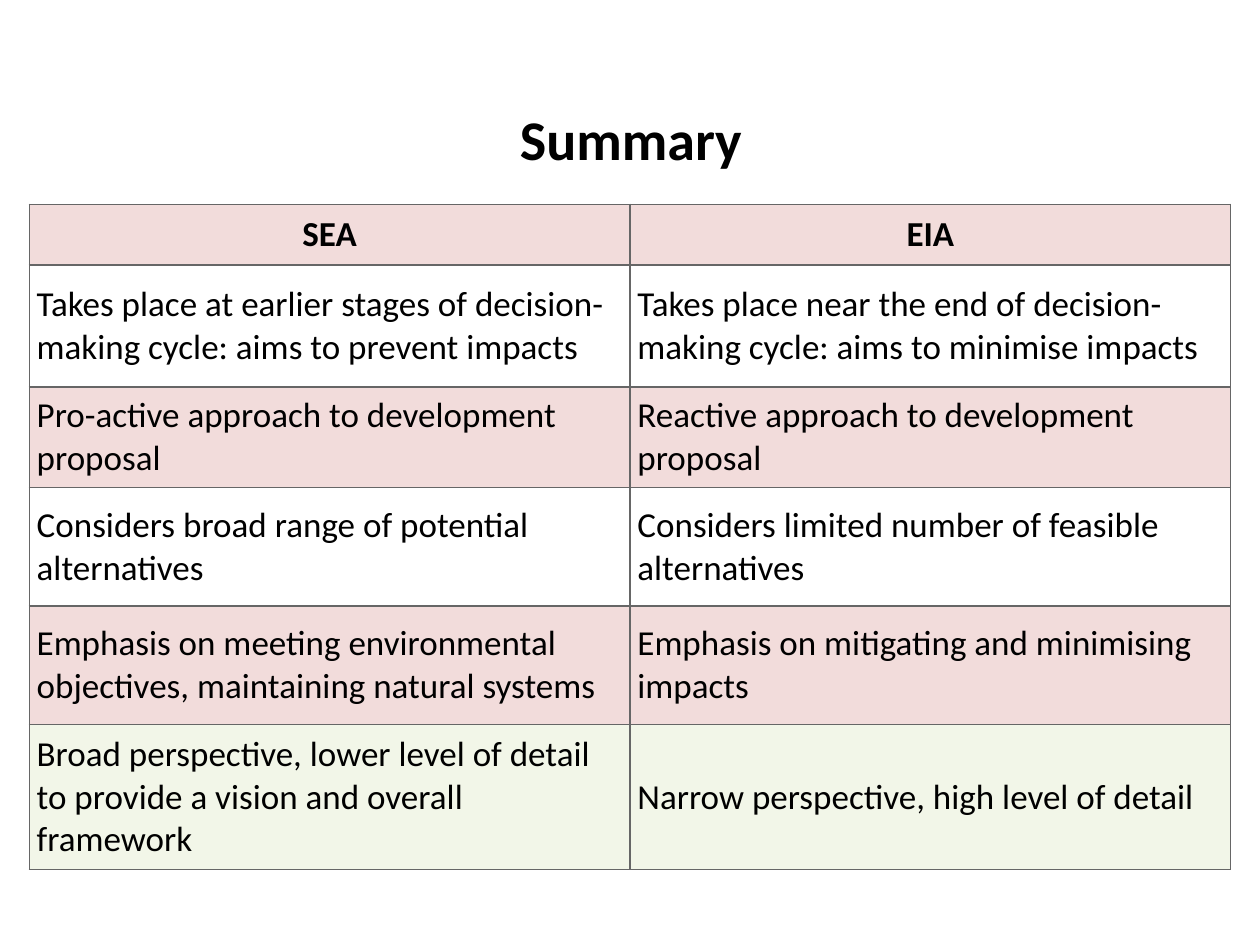
from lxml import etree
from pptx import Presentation
from pptx import util as u
from pptx.dml.color import RGBColor
from pptx.enum import text
from pptx.oxml import ns

ROWS = [
    (1.22, "F2DCDB", "SEA", "EIA"),
    (2.46, None,
     "Takes place at earlier stages of decision-making cycle: aims to prevent impacts",
     "Takes place near the end of decision-making cycle: aims to minimise impacts"),
    (2.01, "F2DCDB",
     "Pro-active approach to development proposal",
     "Reactive approach to development proposal"),
    (2.39, None,
     "Considers broad range of potential alternatives",
     "Considers limited number of feasible alternatives"),
    (2.39, "F2DCDB",
     "Emphasis on meeting environmental objectives, maintaining natural systems",
     "Emphasis on mitigating and minimising impacts"),
    (2.92, "F2F6E8",
     "Broad perspective, lower level of detail to provide a vision and overall framework",
     "Narrow perspective, high level of detail"),
]


def color(value):
    return RGBColor.from_string(value)


class SlideBuilder:
    font = "Calibri"
    ink = "000000"
    border = "666666"
    inset = u.Cm(0.15)

    def __init__(self, slide):
        self.slide = slide

    def add_text(self, paragraph, words, size, bold=False, align=text.PP_ALIGN.LEFT):
        paragraph.alignment = align
        run = paragraph.add_run()
        run.text = words
        run.font.name = self.font
        run.font.size = u.Pt(size)
        run.font.bold = bold
        run.font.color.rgb = color(self.ink)

    def title(self, words, left, top, width, height):
        shape = self.slide.shapes.title
        shape.left, shape.top = u.Cm(left), u.Cm(top)
        shape.width, shape.height = u.Cm(width), u.Cm(height)
        shape.text_frame.vertical_anchor = text.MSO_ANCHOR.MIDDLE
        self.add_text(shape.text_frame.paragraphs[0], words, 32, True, text.PP_ALIGN.CENTER)

    def outline(self, cell):
        properties = cell._tc.get_or_add_tcPr()
        for side in ("lnL", "lnR", "lnT", "lnB"):
            line = etree.SubElement(properties, ns.qn(f"a:{side}"), w=str(u.Pt(1)))
            fill = etree.SubElement(line, ns.qn("a:solidFill"))
            etree.SubElement(fill, ns.qn("a:srgbClr"), val=self.border)

    def cell(self, cell, words, fill, header):
        cell.margin_left = cell.margin_right = self.inset
        cell.margin_top = cell.margin_bottom = self.inset
        cell.vertical_anchor = text.MSO_ANCHOR.MIDDLE
        self.outline(cell)
        if fill:
            cell.fill.solid()
            cell.fill.fore_color.rgb = color(fill)
        else:
            cell.fill.background()
        align = text.PP_ALIGN.CENTER if header else text.PP_ALIGN.LEFT
        self.add_text(cell.text_frame.paragraphs[0], words, 20, header, align)

    def table(self, rows, left, top, width):
        height = sum(row[0] for row in rows)
        table = self.slide.shapes.add_table(
            len(rows), 2, u.Cm(left), u.Cm(top), u.Cm(width), u.Cm(height)).table
        table.horz_banding = False
        for index, (row_height, fill, *entries) in enumerate(rows):
            table.rows[index].height = u.Cm(row_height)
            for column, words in enumerate(entries):
                self.cell(table.cell(index, column), words, fill, index == 0)


def main():
    presentation = Presentation()
    presentation.slide_width = u.Cm(25.4)
    presentation.slide_height = u.Cm(19.05)
    slide = presentation.slides.add_slide(presentation.slide_layouts[5])
    builder = SlideBuilder(slide)
    builder.table(ROWS, 0.59, 4.12, 24.22)
    builder.title("Summary", 1.29, 1.8, 22.86, 1.98)
    presentation.save("out.pptx")


if __name__ == "__main__":
    main()
